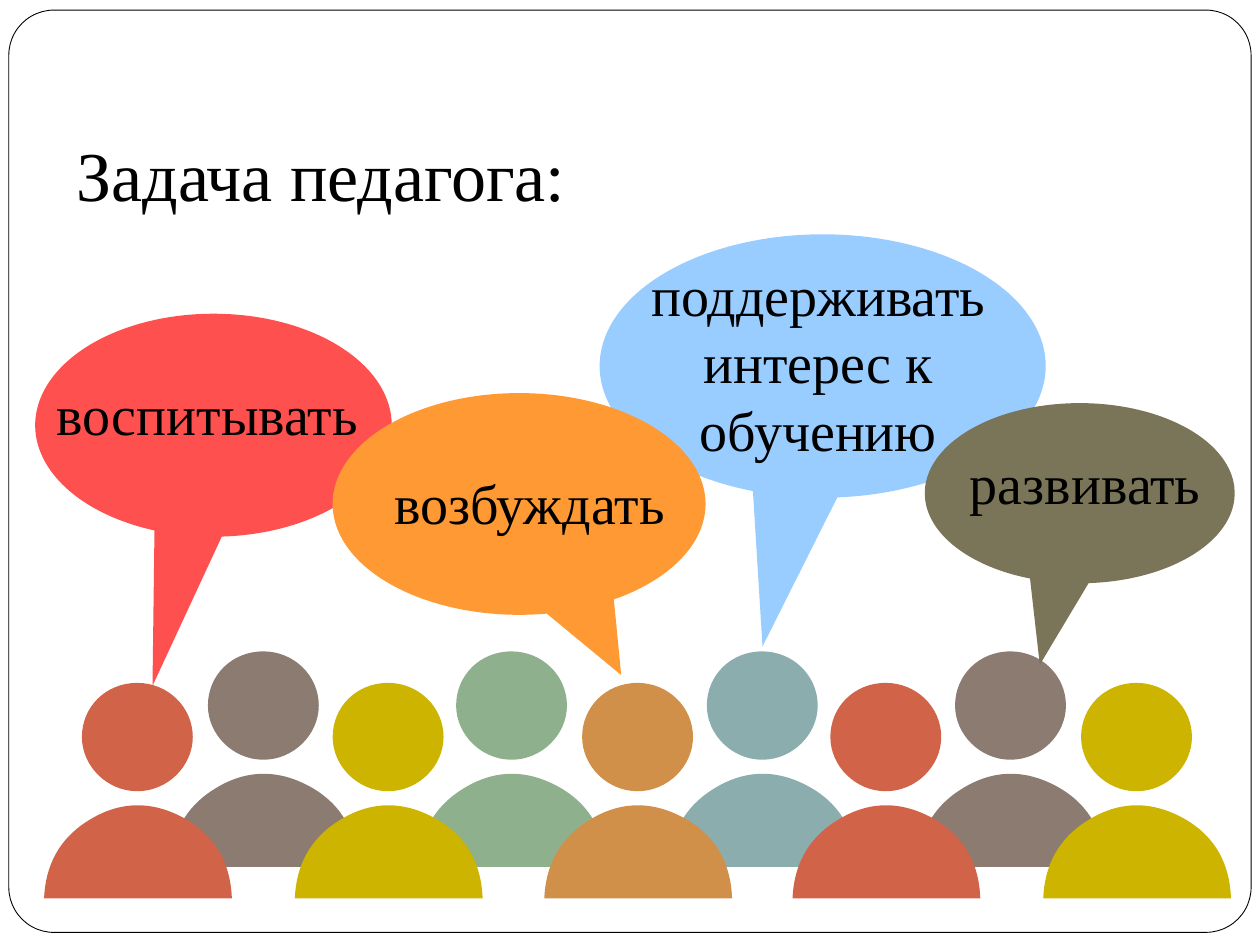
from lxml import etree
from pptx import Presentation
from pptx.dml.color import RGBColor
from pptx.enum import shapes, text
from pptx.oxml.ns import qn
from pptx.util import Inches, Pt

FONT = "Times New Roman"
COLORS = {
    "black": "000000", "white": "FFFFFF",
    "red": "FF5050", "blue": "99CCFF", "orange": "FF9933", "olive": "7A7558",
    "brick": "D16349", "mustard": "CCB400", "ochre": "D19049",
    "taupe": "8C7B70", "sage": "8FB08C", "teal": "8CADAE",
}
# Colour, bubble box, tail adjustments, label, label box
BUBBLES = [
    ("red", (0.28, 2.49, 2.83, 1.77), (-0.171, 1.169),
     "воспитывать", (0.35, 2.96, 2.6, 0.64)),
    ("blue", (4.76, 1.86, 3.54, 2.09), (-0.135, 1.065),
     "поддерживать интерес к обучению", (4.92, 2.02, 3.15, 1.72)),
    ("orange", (2.64, 3.12, 2.96, 1.76), (0.274, 0.772),
     "возбуждать", (3.03, 3.67, 2.36, 0.64)),
    ("olive", (7.34, 3.2, 2.46, 1.43), (-0.129, 0.952),
     "развивать", (7.6, 3.51, 2.17, 0.64)),
]
BACK_ROW, FRONT_ROW = 5.17, 5.42
# Left, top and colour of each listener, from back to front
AUDIENCE = [
    (5.31, BACK_ROW, "teal"), (3.32, BACK_ROW, "sage"),
    (1.35, BACK_ROW, "taupe"), (0.35, FRONT_ROW, "brick"),
    (2.34, FRONT_ROW, "mustard"), (4.32, FRONT_ROW, "ochre"),
    (7.28, BACK_ROW, "taupe"), (6.29, FRONT_ROW, "brick"),
    (8.28, FRONT_ROW, "mustard"),
]
# Outlines: size, start, then Bezier curves, relative to the top left corner
BODY = ((1.49, 0.78), (0, 0.78), [
    ((0.01, 0.52), (0.12, 0.31), (0.34, 0.17)),
    ((0.6, 0), (0.87, 0), (1.14, 0.16)),
    ((1.37, 0.3), (1.48, 0.51), (1.49, 0.78)),
    ((0.99, 0.78), (0.5, 0.78), (0, 0.78)),
])
HEAD = ((0.88, 0.86), (0.44, 0.86), [
    ((0.2, 0.86), (0, 0.66), (0, 0.43)),
    ((0, 0.19), (0.19, 0), (0.44, 0)),
    ((0.68, 0), (0.88, 0.19), (0.88, 0.43)),
    ((0.88, 0.66), (0.68, 0.86), (0.44, 0.86)),
])


def color(name):
    return RGBColor.from_string(COLORS[name])


def inches(box):
    return [Inches(value) for value in box]


def paint(shape, fill):
    shape.shadow.inherit = False
    shape.fill.solid()
    shape.fill.fore_color.rgb = color(fill)
    shape.line.fill.background()


def write(shape, words, size, align=text.PP_ALIGN.LEFT):
    frame = shape.text_frame
    frame.text = words
    frame.word_wrap = True
    frame.auto_size = text.MSO_AUTO_SIZE.SHAPE_TO_FIT_TEXT
    frame.vertical_anchor = text.MSO_ANCHOR.TOP
    paragraph = frame.paragraphs[0]
    paragraph.alignment = align
    font = paragraph.runs[0].font
    font.name, font.size = FONT, Pt(size)
    font.color.rgb = color("black")


def add_frame(slide, box):
    """Draw the page border and move it to the back of the slide master."""
    frame = slide.shapes.add_shape(
        shapes.MSO_SHAPE.ROUNDED_RECTANGLE, *inches(box))
    frame.adjustments[0] = 0.049
    paint(frame, "white")
    frame.line.color.rgb = color("black")
    frame.line.width = Pt(0.5)
    master = slide.slide_layout.slide_master
    frame.element.nvSpPr.cNvPr.set("id", "100")
    master.shapes[0].element.addprevious(frame.element)


def add_title(slide, box, words):
    title = slide.shapes.title
    title.left, title.top, title.width, title.height = inches(box)
    write(title, words, 40)


def add_bubble(slide, fill, box, tail):
    bubble = slide.shapes.add_shape(
        shapes.MSO_SHAPE.OVAL_CALLOUT, *inches(box))
    for index, value in enumerate(tail):
        bubble.adjustments[index] = value
    paint(bubble, fill)


def add_label(slide, words, box):
    centred = " " in words
    align = text.PP_ALIGN.CENTER if centred else text.PP_ALIGN.LEFT
    write(slide.shapes.add_textbox(*inches(box)), words, 32, align)


def add_command(outline, tag, points):
    command = etree.SubElement(outline, qn(tag))
    for x, y in points:
        etree.SubElement(command, qn("a:pt"),
                         x=str(Inches(x)), y=str(Inches(y)))


def add_curved(group, left, top, figure, fill):
    """Build a freeform of the figure's size and give it a curved outline."""
    (width, height), start, curves = figure
    builder = group.shapes.build_freeform(Inches(left), Inches(top))
    builder.add_line_segments([(Inches(left + width), Inches(top + height))])
    shape = builder.convert_to_shape()
    outline = next(shape.element.iter(qn("a:path")))
    for command in list(outline):
        outline.remove(command)
    add_command(outline, "a:moveTo", [start])
    for curve in curves:
        add_command(outline, "a:cubicBezTo", curve)
    etree.SubElement(outline, qn("a:close"))
    paint(shape, fill)


def add_audience(slide):
    group = slide.shapes.add_group_shape()
    for left, top, fill in AUDIENCE:
        add_curved(group, left, top + 0.93, BODY, fill)
        add_curved(group, left + 0.3, top, HEAD, fill)


def main():
    presentation = Presentation()
    presentation.slide_width, presentation.slide_height = inches((10, 7.5))
    slide = presentation.slides.add_slide(presentation.slide_layouts[5])
    add_frame(slide, (0.07, 0.08, 9.86, 7.32))
    add_title(slide, (0.51, 0.99, 4.49, 0.77), "Задача педагога:")
    # The first bubble stands behind the audience, the others in front
    add_bubble(slide, *BUBBLES[0][:3])
    add_audience(slide)
    for bubble in BUBBLES[1:]:
        add_bubble(slide, *bubble[:3])
    for bubble in BUBBLES:
        add_label(slide, *bubble[3:])
    presentation.save("out.pptx")


if __name__ == "__main__":
    main()
